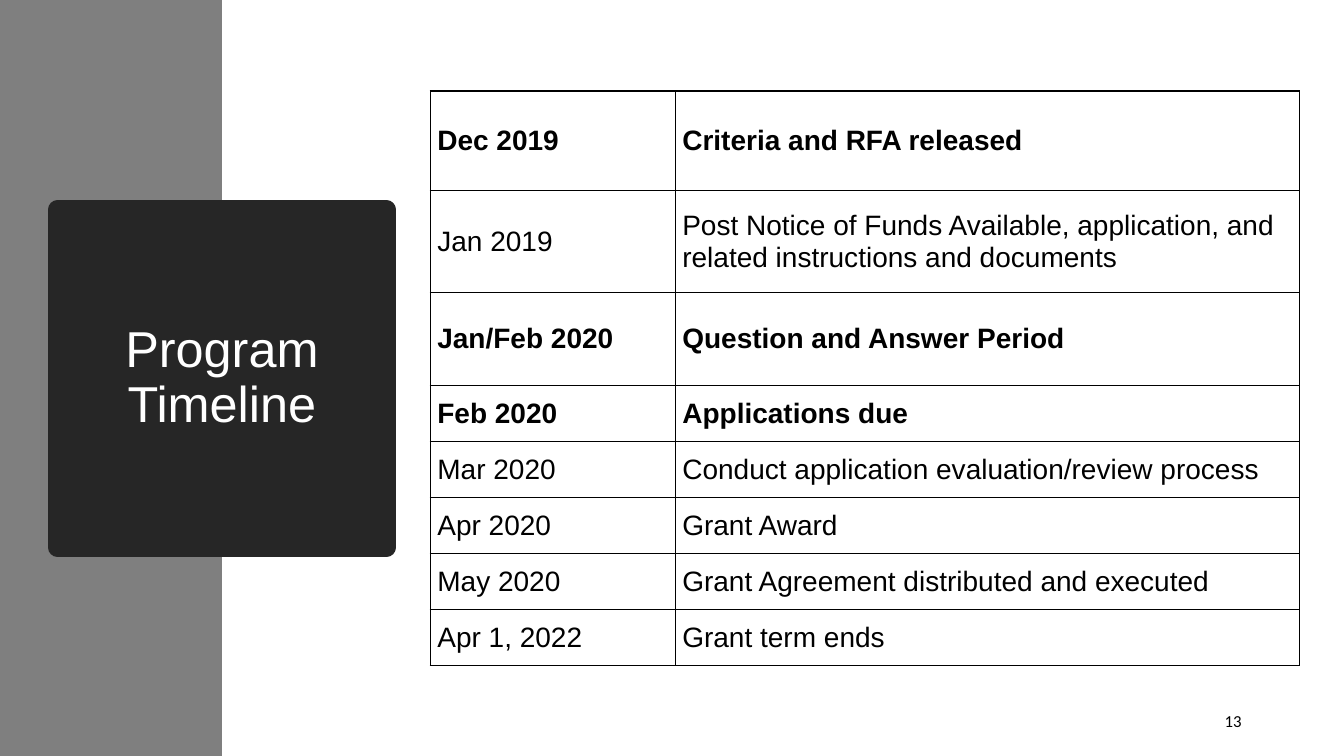
from lxml import etree
from pptx import Presentation
from pptx.dml.color import RGBColor
from pptx.enum.shapes import MSO_SHAPE
from pptx.enum.text import MSO_ANCHOR, MSO_AUTO_SIZE, PP_ALIGN
from pptx.oxml.ns import qn
from pptx.util import Pt

TITLE = "Program Timeline"
PAGE_NUMBER = "13"
MILESTONES = [
    ("Dec 2019", "Criteria and RFA released", True, 71.3),
    ("Jan 2019", "Post Notice of Funds Available, application, and "
     "related instructions and documents", False, 72.7),
    ("Jan/Feb 2020", "Question and Answer Period", True, 66.3),
    ("Feb 2020", "Applications due", True, 40),
    ("Mar 2020", "Conduct application evaluation/review process", False, 40),
    ("Apr 2020", "Grant Award", False, 40),
    ("May 2020", "Grant Agreement distributed and executed", False, 40),
    ("Apr 1, 2022", "Grant term ends", False, 40),
]
COLUMN_WIDTHS = (175, 445.7)

BLACK = RGBColor(0x00, 0x00, 0x00)
WHITE = RGBColor(0xFF, 0xFF, 0xFF)
GRAY = RGBColor(0x7F, 0x7F, 0x7F)
CHARCOAL = RGBColor(0x26, 0x26, 0x26)
RECTANGLE = MSO_SHAPE.RECTANGLE
MIDDLE = MSO_ANCHOR.MIDDLE
CENTER = PP_ALIGN.CENTER
RIGHT = PP_ALIGN.RIGHT
NO_FIT = MSO_AUTO_SIZE.NONE


def place(box, left, top, width, height):
    box.left, box.top = Pt(left), Pt(top)
    box.width, box.height = Pt(width), Pt(height)


def write(frame, text, size, font, color, align=None, bold=False):
    frame.text = text
    frame.word_wrap = True
    para = frame.paragraphs[0]
    if align is not None:
        para.alignment = align
    span = para.runs[0].font
    span.size, span.name, span.bold = Pt(size), font, bold
    span.color.rgb = color
    return para


def add_borders(cell):
    properties = cell._tc.get_or_add_tcPr()
    for side in ("lnL", "lnR", "lnT", "lnB"):
        line = etree.SubElement(properties, qn(f"a:{side}"), w=str(Pt(1)))
        fill = etree.SubElement(line, qn("a:solidFill"))
        etree.SubElement(fill, qn("a:srgbClr"), val=str(BLACK))


def add_band_and_title(page):
    title = page.shapes.title
    band = page.shapes.add_shape(RECTANGLE, 0, 0, Pt(158.6), Pt(540))
    band.shadow.inherit = False
    band.fill.solid()
    band.fill.fore_color.rgb = GRAY
    band.line.fill.background()
    title.element.addprevious(band.element)

    place(title, 41.2, 149.8, 234.7, 241.2)
    title.fill.solid()
    title.fill.fore_color.rgb = CHARCOAL
    title.line.color.rgb = CHARCOAL
    title.line.width = Pt(13.75)
    frame = title.text_frame
    para = write(frame, TITLE, 36, "Arial", WHITE, CENTER)
    para.line_spacing = 0.9
    frame.vertical_anchor = MIDDLE
    frame.auto_size = NO_FIT


def add_timeline(page):
    heights = [milestone[3] for milestone in MILESTONES]
    frame = page.shapes.add_table(
        len(MILESTONES), len(COLUMN_WIDTHS), Pt(307.4), Pt(65),
        Pt(sum(COLUMN_WIDTHS)), Pt(sum(heights)))
    table = frame.table
    table.first_row = False
    table.horz_banding = False
    for column, width in zip(table.columns, COLUMN_WIDTHS):
        column.width = Pt(width)
    for row, (date, event, bold, height) in zip(table.rows, MILESTONES):
        row.height = Pt(height)
        for cell, text in zip(row.cells, (date, event)):
            add_borders(cell)
            cell.fill.background()
            cell.vertical_anchor = MIDDLE
            cell.margin_left = cell.margin_right = Pt(5)
            cell.margin_top = cell.margin_bottom = 0
            write(cell.text_frame, text, 20, "Arial", BLACK, bold=bold)


def add_page_number(page):
    box = page.shapes.add_textbox(Pt(678), Pt(500.5), Pt(216), Pt(28.8))
    write(box.text_frame, PAGE_NUMBER, 12, "Calibri", BLACK, RIGHT)
    box.text_frame.vertical_anchor = MIDDLE


def main():
    deck = Presentation()
    deck.slide_width, deck.slide_height = Pt(960), Pt(540)
    page = deck.slides.add_slide(deck.slide_layouts[5])
    add_band_and_title(page)
    add_timeline(page)
    add_page_number(page)
    deck.save("out.pptx")


if __name__ == "__main__":
    main()
